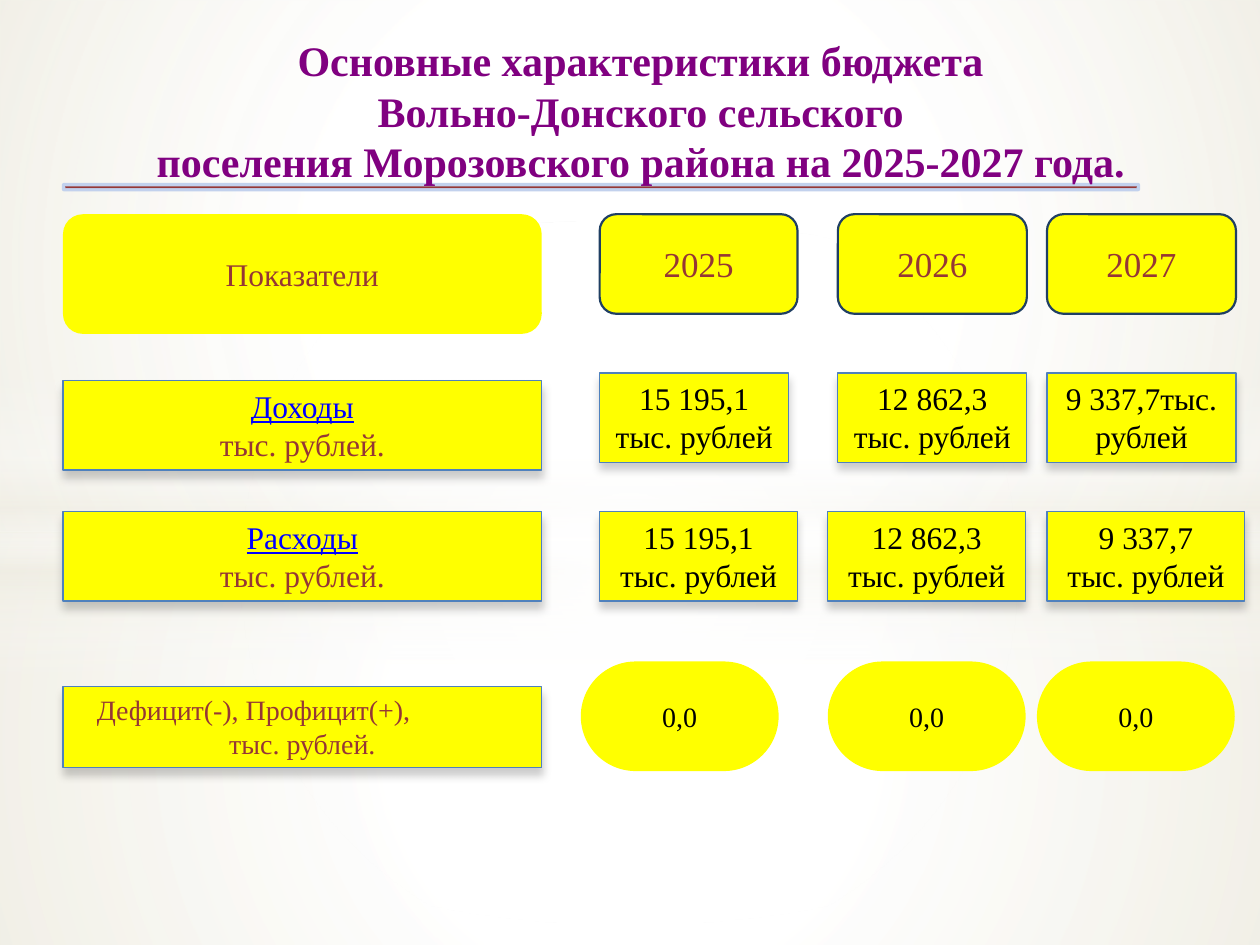
from lxml import etree
from pptx import Presentation
from pptx.dml.color import RGBColor
from pptx.enum.shapes import MSO_SHAPE
from pptx.enum.text import MSO_ANCHOR, PP_ALIGN
from pptx.oxml import parse_xml
from pptx.util import Inches, Pt

RECT, ROUND, OVAL = MSO_SHAPE.RECTANGLE, MSO_SHAPE.ROUNDED_RECTANGLE, MSO_SHAPE.OVAL
CENTER, LEFT = PP_ALIGN.CENTER, PP_ALIGN.LEFT
TOP, MIDDLE = MSO_ANCHOR.TOP, MSO_ANCHOR.MIDDLE
DRAWING = "http://schemas.openxmlformats.org/drawingml/2006/main"
FONT = "Times New Roman"

COLORS = {
    "white": "FFFFFF", "cream": "EEECE1", "yellow": "FFFF00", "brown": "953735",
    "black": "000000", "link": "0000FF", "title": "800080", "navy": "203F63",
    "blue": "4F81BD", "pale": "C2D1ED", "paler": "E1E8F5",
}

TITLE = [
    "Основные характеристики бюджета",
    "Вольно-Донского сельского",
    "поселения Морозовского района на 2025-2027 года.",
]

# shape, place, gradient path (None is top to bottom), stops of position, colour, opacity
BACKDROP = [
    (RECT, (0, 4.23, 10, 3.27), "circle",
     [(0, "white", 91), (37, "white", 76), (100, "cream", 79)]),
    (RECT, (0, 0, 10, 4.23), "circle",
     [(0, "white", 89), (48, "white", 62), (100, "cream", 79)]),
    (RECT, (0, 2.9, 10, 2.5), None,
     [(0, "white", 0), (29, "white", 30), (45, "cream", 40),
      (55, "white", 26), (65, "cream", 60), (100, "white", 0)]),
    (OVAL, (0, 1.75, 10, 5.58), "circle", [(0, "white", 100), (54, "white", 0)]),
]
RULE_STOPS = [(0, "brown", 100), (50, "pale", 100), (100, "paler", 100)]

UNIT = "тыс. рублей"
LABEL_LEFT, LABEL_WIDTH = 0.5, 3.8
# label lines, top, height, text size
LABELS = [
    (["Доходы", UNIT + "."], 3.02, 0.71, 18),
    (["Расходы", UNIT + "."], 4.06, 0.71, 18),
    (["Дефицит(-), Профицит(+),", UNIT + "."], 5.45, 0.64, 16),
]
LINKED = ("Доходы", "Расходы")

# kind, top, height, then left, width and lines of each year's cell
ROWS = [
    ("year", 1.7, 0.79, [(4.76, 1.57, ["2025"]), (6.65, 1.5, ["2026"]), (8.31, 1.5, ["2027"])]),
    ("amount", 2.96, 0.71, [(4.76, 1.5, ["15 195,1", UNIT]), (6.65, 1.5, ["12 862,3", UNIT]),
                            (8.31, 1.5, ["9 337,7тыс. рублей"])]),
    ("amount", 4.06, 0.71, [(4.76, 1.57, ["15 195,1", UNIT]), (6.57, 1.57, ["12 862,3", UNIT]),
                            (8.31, 1.57, ["9 337,7", UNIT])]),
    ("balance", 5.25, 0.87, [(4.61, 1.57, ["0,0"]), (6.57, 1.57, ["0,0"]), (8.23, 1.57, ["0,0"])]),
]
# shape, outline colour, outline width, text size, text colour, anchor
KINDS = {
    "heading": (ROUND, None, 0, 18, "brown", MIDDLE),
    "year": (ROUND, "navy", 1.25, 20, "brown", MIDDLE),
    "label": (RECT, "blue", 0.75, 18, "brown", TOP),
    "amount": (RECT, "blue", 0.75, 18, "black", TOP),
    "balance": (ROUND, None, 0, 16, "black", MIDDLE),
}


def rgb(name):
    return RGBColor.from_string(COLORS[name])


def add_plain(slide, kind, place, line=None, width=0):
    shape = slide.shapes.add_shape(kind, *map(Inches, place))
    shape.shadow.inherit = False
    if line:
        shape.line.color.rgb = rgb(line)
        shape.line.width = Pt(width)
    else:
        shape.line.fill.background()
    return shape


def fill_gradient(shape, path, stops):
    stop_xml = "".join(
        f'<a:gs pos="{pos * 1000}"><a:srgbClr val="{COLORS[color]}">'
        f'<a:alpha val="{opacity * 1000}"/></a:srgbClr></a:gs>'
        for pos, color, opacity in stops)
    if path:
        direction = (f'<a:path path="{path}"><a:fillToRect l="50000" t="50000" '
                     'r="50000" b="50000"/></a:path>')
    else:
        direction = '<a:lin ang="5400000" scaled="0"/>'
    shape.fill.background()
    properties = shape.element.spPr
    properties.replace(
        properties.find(f"{{{DRAWING}}}noFill"),
        parse_xml(f'<a:gradFill xmlns:a="{DRAWING}" rotWithShape="1">'
                  f"<a:gsLst>{stop_xml}</a:gsLst>{direction}</a:gradFill>"))


def add_shadow(shape):
    effects = shape.element.spPr.find(f"{{{DRAWING}}}effectLst")
    shadow = etree.SubElement(
        effects, f"{{{DRAWING}}}outerShdw", blurRad=str(Pt(5)), dist=str(Pt(4)),
        dir="5400000", rotWithShape="0")
    color = etree.SubElement(shadow, f"{{{DRAWING}}}srgbClr", val=COLORS["black"])
    etree.SubElement(color, f"{{{DRAWING}}}alpha", val="20000")


def write_lines(shape, lines, size, color, anchor, bold=None):
    frame = shape.text_frame
    frame.word_wrap = True
    frame.vertical_anchor = anchor
    frame.text = "\n".join(lines)
    for para in frame.paragraphs:
        para.alignment = CENTER
        for span in para.runs:
            span.font.name = FONT
            span.font.size = Pt(size)
            span.font.bold = bold
            span.font.color.rgb = rgb(color)


def add_box(slide, kind, place, lines, text_size=None):
    form, line, width, size, color, anchor = KINDS[kind]
    box = add_plain(slide, form, place, line, width)
    box.fill.solid()
    box.fill.fore_color.rgb = rgb("yellow")
    if kind == "balance":
        box.adjustments[0] = 0.5
    if form == RECT:
        add_shadow(box)
    write_lines(box, lines, text_size or size, color, anchor)
    return box


def add_title(slide):
    box = slide.shapes.add_textbox(*map(Inches, (0.51, 0.22, 8.66, 1.31)))
    write_lines(box, TITLE, 24, "title", MIDDLE, bold=True)
    for para in box.text_frame.paragraphs:
        para._p.get_or_add_pPr().set("indent", str(Inches(0.49)))


def add_label(slide, lines, top, height, size):
    box = add_box(slide, "label", (LABEL_LEFT, top, LABEL_WIDTH, height), lines, size)
    first = box.text_frame.paragraphs[0]
    if lines[0] in LINKED:
        first.runs[0].font.underline = True
        first.runs[0].font.color.rgb = rgb("link")
    else:
        first.alignment = LEFT
        first._p.get_or_add_pPr().set("indent", str(Inches(0.17)))


def main():
    deck = Presentation()
    deck.slide_width, deck.slide_height = Inches(10), Inches(7.5)
    slide = deck.slides.add_slide(deck.slide_layouts[6])

    for form, place, path, stops in BACKDROP:
        fill_gradient(add_plain(slide, form, place), path, stops)
    rule = add_plain(slide, ROUND, (0.5, 1.46, 8.54, 0.05), "pale", 1.25)
    fill_gradient(rule, "rect", RULE_STOPS)

    add_title(slide)
    add_box(slide, "heading", (LABEL_LEFT, 1.7, LABEL_WIDTH, 0.95), ["Показатели"])
    for label in LABELS:
        add_label(slide, *label)
    for kind, top, height, cells in ROWS:
        for left, width, lines in cells:
            add_box(slide, kind, (left, top, width, height), lines)

    deck.save("out.pptx")


if __name__ == "__main__":
    main()
